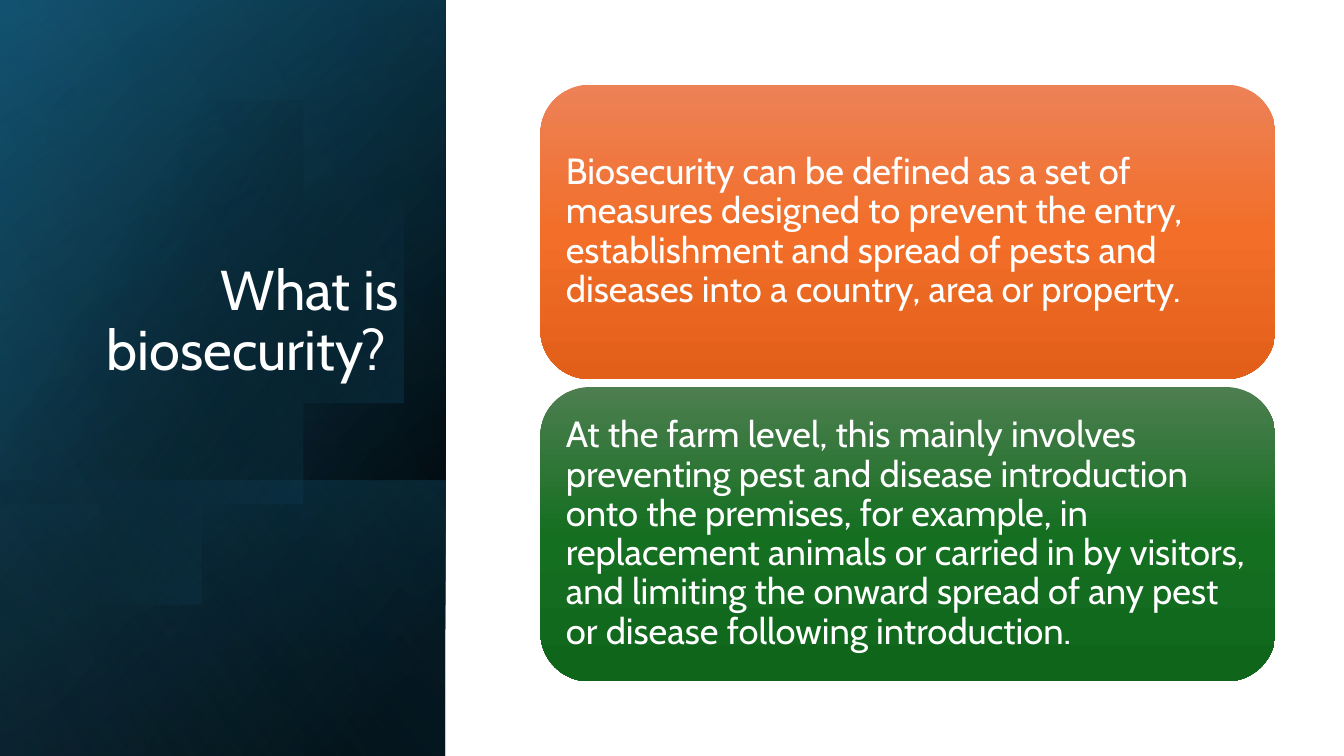
from dataclasses import dataclass
from math import acos, cos, sin

from lxml.etree import SubElement
from pptx import Presentation
from pptx.dml.color import RGBColor
from pptx.enum.shapes import MSO_SHAPE
from pptx.enum.text import MSO_ANCHOR, MSO_AUTO_SIZE, PP_ALIGN
from pptx.oxml.ns import qn
from pptx.util import Inches, Pt

WIDE, HIGH = 13.33, 7.5


@dataclass(frozen=True)
class Theme:
    font: str = "Cabin"
    head: int = 40
    body: int = 26
    white: str = "FFFFFF"
    black: str = "000000"
    teal: str = "156082"
    deep: str = "104862"
    sky: str = "46B1E1"
    orange: tuple = ("ED8257", "F26E29", "E25F1A")
    green: tuple = ("4D7E50", "156F21", "0F661B")


LOOK = Theme()

# Side panel: share of the slide width, and top of its lower band
SIDE = WIDE * 0.3315
BAND = HIGH * 0.635

# Cards: one column, equal rows
LEFT, TOP, CARD_W, CARD_H, GAP = 5.36, 0.84, 7.29, 2.92, 0.08
CARDS = [
    (LOOK.orange,
     "Biosecurity can be defined as a set of measures designed to prevent "
     "the entry, establishment and spread of pests and diseases into a "
     "country, area or property."),
    (LOOK.green,
     "At the farm level, this mainly involves preventing pest and disease "
     "introduction onto the premises, for example, in replacement animals or "
     "carried in by visitors, and limiting the onward spread of any pest or "
     "disease following introduction."),
]


def shade(shape, stops, angle):
    """Fill with a gradient of (place, colour, opacity) stops, in percent."""
    shape.shadow.inherit = False
    shape.line.fill.background()
    shape.fill.gradient()
    grad = shape._element.spPr.find(qn("a:gradFill"))
    for child in list(grad):
        grad.remove(child)
    grad.set("rotWithShape", "1")
    group = SubElement(grad, qn("a:gsLst"))
    for place, color, alpha in stops:
        stop = SubElement(group, qn("a:gs"), pos=str(place * 1000))
        tint = SubElement(stop, qn("a:srgbClr"), val=color)
        if alpha < 100:
            SubElement(tint, qn("a:alpha"), val=str(alpha * 1000))
    SubElement(grad, qn("a:lin"), ang=str(angle * 60000), scaled="0")


def write(shape, text, size, color=LOOK.white, align=PP_ALIGN.LEFT,
          anchor=MSO_ANCHOR.MIDDLE, inset=0.11, base=0.11):
    frame = shape.text_frame
    frame.word_wrap = True
    frame.auto_size = MSO_AUTO_SIZE.NONE
    frame.vertical_anchor = anchor
    frame.margin_left = frame.margin_right = Inches(inset)
    frame.margin_top, frame.margin_bottom = Inches(inset), Inches(base)
    para = frame.paragraphs[0]
    para.alignment, para.line_spacing = align, 0.9
    run = para.add_run()
    run.text = text
    run.font.name, run.font.size = LOOK.font, Pt(size)
    run.font.color.rgb = RGBColor.from_string(color)


def panel(slide, top, stops, angle):
    """Layer from top to the slide's foot, turned a quarter and mirrored."""
    tall = HIGH - top
    shape = slide.shapes.add_shape(
        MSO_SHAPE.RECTANGLE, Inches((SIDE - tall) / 2),
        Inches(top + (tall - SIDE) / 2), Inches(tall), Inches(SIDE))
    shape.rotation = 90
    shape._element.spPr.find(qn("a:xfrm")).set("flipH", "1")
    shade(shape, stops, angle)


def disc(slide, x, y, radius, edge, stops, angle):
    """Circle cut off by an upright chord at x = edge."""
    half, steps = acos((edge - x) / radius), 90
    turns = [half * (2 * n / steps - 1) for n in range(steps + 1)]
    dots = [(x + radius * cos(t), y + radius * sin(t)) for t in turns]
    pen = slide.shapes.build_freeform(*dots[0], scale=Inches(1))
    pen.add_line_segments(dots[1:], close=True)
    shade(pen.convert_to_shape(), stops, angle)


def card(slide, row, colors, text):
    shape = slide.shapes.add_shape(
        MSO_SHAPE.ROUNDED_RECTANGLE, Inches(LEFT),
        Inches(TOP + row * (CARD_H + GAP)), Inches(CARD_W), Inches(CARD_H))
    shade(shape, [(50 * n, c, 100) for n, c in enumerate(colors)], 90)
    write(shape, text, LOOK.body)


def heading(slide, text):
    title = slide.shapes.title
    title.left, title.top = Inches(0.64), Inches(1.84)
    title.width, title.height = Inches(3.41), Inches(2.62)
    write(title, text, LOOK.head, align=PP_ALIGN.RIGHT,
          anchor=MSO_ANCHOR.BOTTOM, inset=0.1, base=0.66)
    slide.shapes._spTree.append(title._element)  # in front of the panel


def main():
    deck = Presentation()
    deck.slide_width, deck.slide_height = Inches(WIDE), Inches(HIGH)
    slide = deck.slides.add_slide(deck.slide_layouts[5])

    # Side panel layers, back to front
    panel(slide, 0, [(8, LOOK.black, 100), (100, LOOK.deep, 100)], 50)
    panel(slide, 0, [(0, LOOK.black, 0), (99, LOOK.teal, 46)], 30)
    panel(slide, BAND, [(2, LOOK.teal, 29), (100, LOOK.black, 30)], 130)
    disc(slide, 1.43, 3.38, 2.28, -0.15,
         [(29, LOOK.black, 0), (100, LOOK.teal, 43)], 30)
    panel(slide, 0, [(0, LOOK.black, 0), (99, LOOK.sky, 11)], 120)

    # Title and cards
    heading(slide, "What is biosecurity? ")
    for row, (colors, text) in enumerate(CARDS):
        card(slide, row, colors, text)

    deck.save("out.pptx")


if __name__ == "__main__":
    main()
